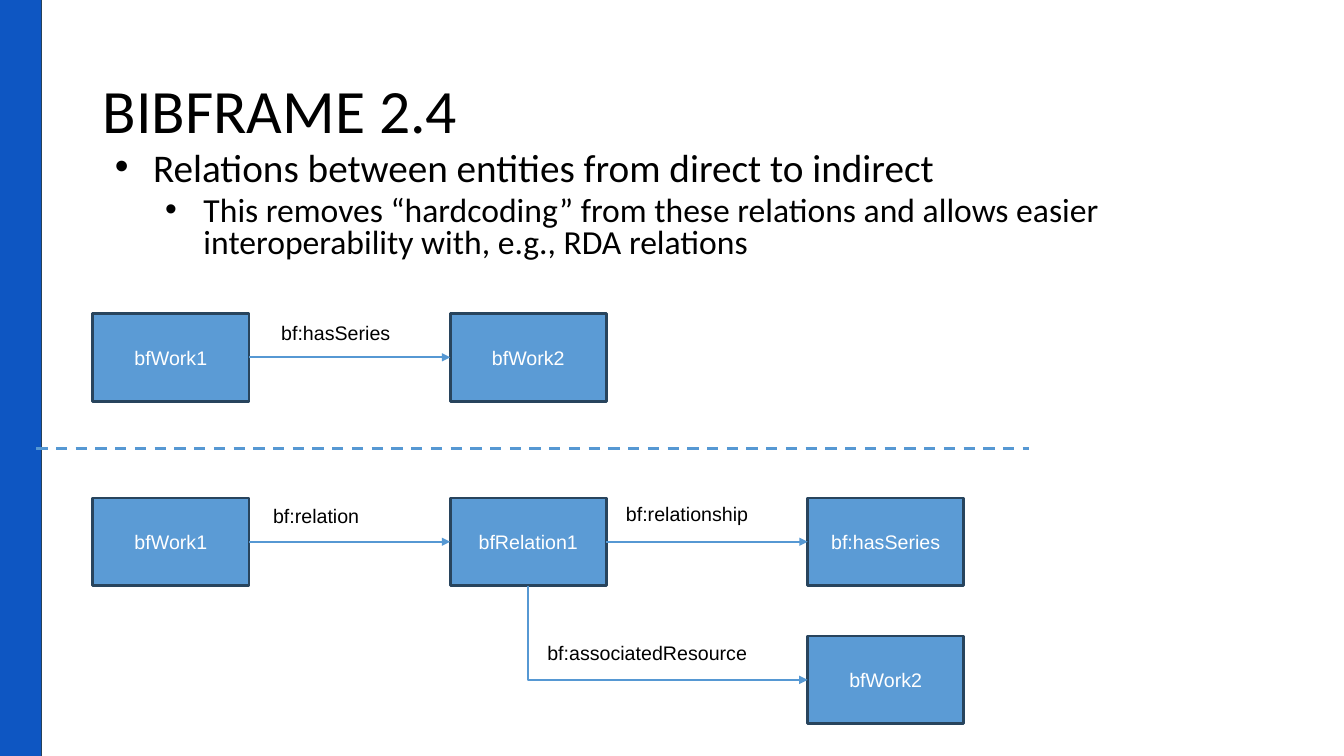
from lxml import etree
from pptx import Presentation
from pptx import util as u
from pptx.dml.color import RGBColor
from pptx.enum import dml, shapes, text
from pptx.oxml import ns

theme = {
    "bar": "0E56C2", "edge": "264159", "box": "5B9BD5", "rim": "28445D",
    "link": "5698D3", "ink": "000000", "pale": "FFFFFF",
    "head": 44, "point": 28, "sub": 24, "node": 14,
    "title": "Calibri", "body": "Arial",
}
# Grid: column step, node size and row tops, in inches
left, step, wide, high = 0.92, 3.545, 1.55, 0.87
rows = [3.11, 4.94, 6.31]

deck = Presentation()
deck.slide_width, deck.slide_height = u.Inches(13.33), u.Inches(7.5)
slide = deck.slides.add_slide(deck.slide_layouts[6])
parts = slide.shapes


def write(frame, para, words, size, face, ink, **form):
    frame.word_wrap = True
    run = para.add_run()
    run.text = words
    run.font.color.rgb = RGBColor.from_string(theme[ink])
    for key, val in {"size": u.Pt(theme[size]), "name": theme[face]}.items():
        setattr(run.font, key, val)
    for key, val in form.items():
        setattr(para, key, val)


def join(start, end, width, arrow=True):
    line = parts.add_connector(shapes.MSO_CONNECTOR.STRAIGHT,
                               *map(u.Inches, (*start, *end)))
    line.line.width = u.Pt(width)
    line.line.color.rgb = RGBColor.from_string(theme["link"])
    if arrow:
        etree.SubElement(line.line._get_or_add_ln(), ns.qn("a:tailEnd"), type="triangle")
    etree.SubElement(line._element.spPr, ns.qn("a:effectLst"))
    return line


# Side bar
bar = parts.add_shape(shapes.MSO_SHAPE.RECTANGLE,
                      *map(u.Inches, (-0.16, -0.07, 0.57, 7.67)))
bar.shadow.inherit = False
bar.fill.solid()
bar.fill.fore_color.rgb = RGBColor.from_string(theme["bar"])
bar.line.color.rgb = RGBColor.from_string(theme["edge"])
bar.line.width = u.Pt(1)

# Title
frame = parts.add_textbox(*map(u.Inches, (left, 0.4, 11.5, 1.45))).text_frame
frame.vertical_anchor = text.MSO_ANCHOR.MIDDLE
write(frame, frame.paragraphs[0], "BIBFRAME 2.4", "head", "title", "ink", line_spacing=0.9)

# Bullets
points = [
    ("Relations between entities from direct to indirect", "point", 10),
    ("This removes “hardcoding” from these relations and allows easier "
     "interoperability with, e.g., RDA relations", "sub", 5),
]
frame = parts.add_textbox(*map(u.Inches, (left, 1.46, 11.5, 1.38))).text_frame
for level, (words, size, gap) in enumerate(points):
    para = frame.add_paragraph() if level else frame.paragraphs[0]
    write(frame, para, words, size, "title", "ink",
          level=level, line_spacing=0.8, space_before=u.Pt(gap))
    props = para._p.get_or_add_pPr()
    props.set("marL", str(u.Inches(0.5 * (level + 1))))
    props.set("indent", str(u.Inches(-0.38)))
    tint = etree.SubElement(props, ns.qn("a:buClr"))
    etree.SubElement(tint, ns.qn("a:srgbClr"), val=theme["ink"])
    etree.SubElement(props, ns.qn("a:buFont"), typeface="Arial")
    etree.SubElement(props, ns.qn("a:buChar"), char="•")

# Nodes, keyed by column and row
names = {
    (0, 0): "bfWork1", (1, 0): "bfWork2",
    (0, 1): "bfWork1", (1, 1): "bfRelation1", (2, 1): "bf:hasSeries",
    (2, 2): "bfWork2",
}
nodes = {}
for (col, row), words in names.items():
    node = parts.add_shape(shapes.MSO_SHAPE.RECTANGLE, *map(
        u.Inches, (left + col * step, rows[row], wide, high)))
    node.shadow.inherit = False
    node.fill.solid()
    node.fill.fore_color.rgb = RGBColor.from_string(theme["box"])
    node.line.color.rgb = RGBColor.from_string(theme["rim"])
    node.line.width = u.Pt(2)
    frame = node.text_frame
    frame.vertical_anchor = text.MSO_ANCHOR.MIDDLE
    write(frame, frame.paragraphs[0], words, "node", "body", "pale",
          alignment=text.PP_ALIGN.CENTER)
    nodes[col, row] = node

# Straight arrows between neighbours
for col, row in [(0, 0), (0, 1), (1, 1)]:
    mid = rows[row] + high / 2
    arrow = join((left + col * step + wide, mid), (left + (col + 1) * step, mid), 1.5)
    arrow.begin_connect(nodes[col, row], 3)
    arrow.end_connect(nodes[col + 1, row], 1)

# Bent arrow: a quarter turn of a mirrored elbow about its centre
x1, y1 = left + step + wide / 2, rows[1] + high
x2, y2 = left + 2 * step, rows[2] + high / 2
cx, cy, dx, dy = (x1 + x2) / 2, (y1 + y2) / 2, (x2 - x1) / 2, (y2 - y1) / 2
bend = join((cx + dy, cy - dx), (cx - dy, cy + dx), 1.5)
bend._element.spPr.find(ns.qn("a:xfrm")).set("rot", str(270 * 60000))
bend._element.spPr.find(ns.qn("a:prstGeom")).set("prst", "bentConnector2")

# Arrow labels
labels = [
    ("bf:hasSeries", 2.69, 3.13, 1.52),
    ("bf:relation", 2.61, 4.95, 1.33),
    ("bf:relationship", 6.11, 4.93, 1.79),
    ("bf:associatedResource", 5.33, 6.31, 2.66),
]
for words, x, y, width in labels:
    frame = parts.add_textbox(*map(u.Inches, (x, y, width, 0.4))).text_frame
    write(frame, frame.paragraphs[0], words, "node", "body", "ink")

# Divider between direct and indirect relations
split = join((0.36, 4.45), (10.21, 4.45), 2, arrow=False)
split.line.dash_style = dml.MSO_LINE.DASH

deck.save("out.pptx")
